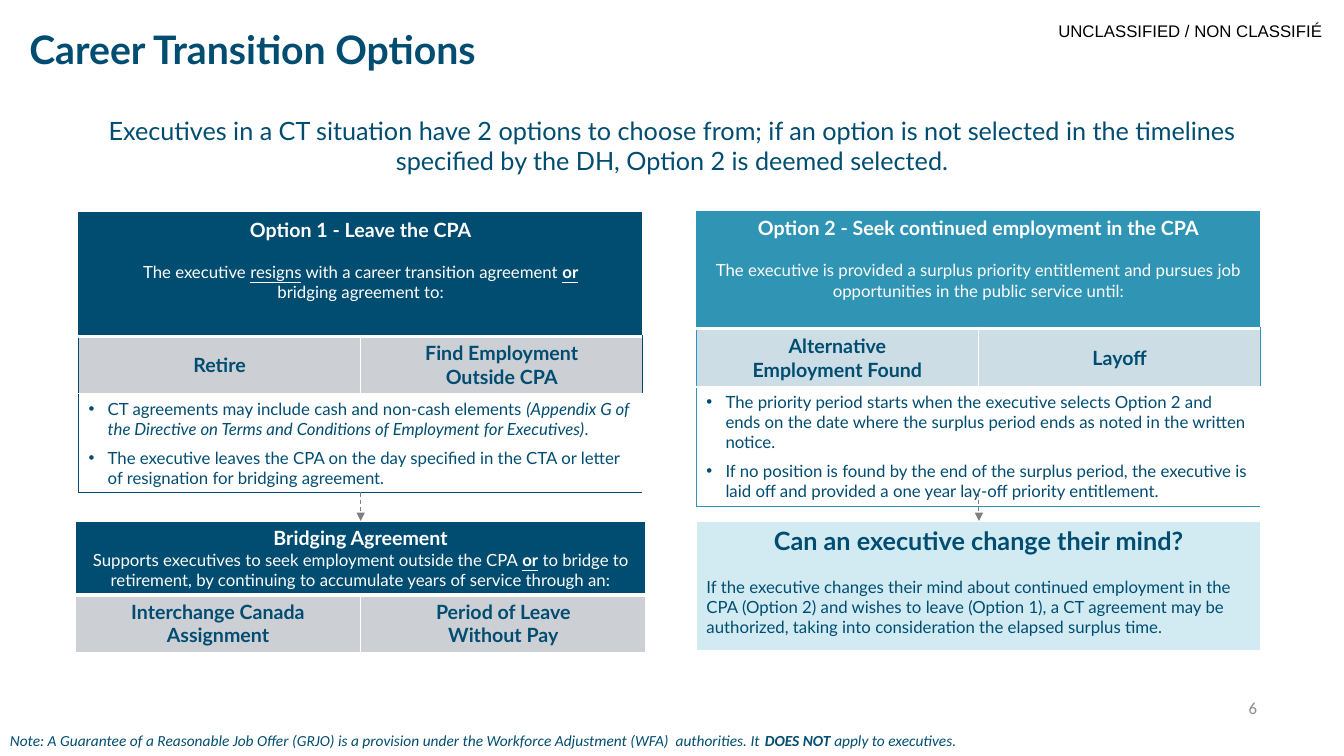
from collections import namedtuple

from lxml import etree
from pptx import Presentation
from pptx.dml.color import RGBColor
from pptx.enum.dml import MSO_LINE
from pptx.enum.shapes import MSO_CONNECTOR
from pptx.enum.text import MSO_ANCHOR, PP_ALIGN
from pptx.oxml.ns import qn
from pptx.util import Cm, Pt

LEFT, CENTER, RIGHT = PP_ALIGN.LEFT, PP_ALIGN.CENTER, PP_ALIGN.RIGHT
TOP, MIDDLE = MSO_ANCHOR.TOP, MSO_ANCHOR.MIDDLE
STRAIGHT = MSO_CONNECTOR.STRAIGHT
DASH = MSO_LINE.DASH

COLORS = {
    "navy": "004D71", "teal": "3095B4", "silver": "CCD0D5", "mist": "CDDDE5",
    "ice": "D2EBF3", "white": "FFFFFF", "black": "000000",
    "gray": "808080", "number": "8C8C8C",
}

Line = namedtuple("Line", "runs size align before bullet", defaults=(12, CENTER, 0, False))
Cell = namedtuple("Cell", "lines fill color anchor", defaults=("navy", MIDDLE))


def heading(text, size=14):
    """Return a bold centred line."""
    return Line([(text, "b")], size)


def bullet(*runs):
    """Return a bulleted line."""
    return Line(runs, align=LEFT, bullet=True)


class TransitionSlide:
    """Style and drawing methods for one slide."""

    def __init__(self, deck):
        """Add a title-only slide to the deck."""
        self.page = deck.slides.add_slide(deck.slide_layouts[5])
        self.font = "Lato"

    def color(self, name):
        """Return a named colour."""
        return RGBColor.from_string(COLORS[name])

    def set_lines(self, frame, lines, color, font=None):
        """Fill a text frame with formatted lines."""
        for index, line in enumerate(lines):
            para = frame.paragraphs[0] if index == 0 else frame.add_paragraph()
            para.alignment = line.align
            if line.before:
                para.space_before = Pt(line.before)
            if line.bullet:
                para.space_after = Pt(6)
                properties = para._p.get_or_add_pPr()
                properties.set("marL", str(Cm(0.48)))
                properties.set("indent", str(-Cm(0.48)))
                etree.SubElement(properties, qn("a:buFont")).set("typeface", "Arial")
                etree.SubElement(properties, qn("a:buChar")).set("char", "•")
            for text, style in line.runs:
                span = para.add_run()
                span.text = text
                span.font.name = font or self.font
                span.font.size = Pt(line.size)
                span.font.color.rgb = self.color(color)
                span.font.bold = "b" in style
                span.font.italic = "i" in style
                span.font.underline = "u" in style

    def title(self, text, left, top, width, height):
        """Place the slide title."""
        box = self.page.shapes.title
        box.left, box.top, box.width, box.height = Cm(left), Cm(top), Cm(width), Cm(height)
        frame = box.text_frame
        frame.margin_left = frame.margin_right = frame.margin_top = frame.margin_bottom = 0
        frame.vertical_anchor = MIDDLE
        self.set_lines(frame, [Line([(text, "b")], 28, LEFT)], "navy")

    def text(self, line, left, top, width, height, color="navy", font=None,
             anchor=TOP, inset=True):
        """Place a text box with one paragraph."""
        box = self.page.shapes.add_textbox(Cm(left), Cm(top), Cm(width), Cm(height))
        frame = box.text_frame
        frame.word_wrap = True
        frame.vertical_anchor = anchor
        if not inset:
            frame.margin_left = frame.margin_right = frame.margin_top = frame.margin_bottom = 0
        self.set_lines(frame, [line], color, font)

    def border(self, cell, side, color, width):
        """Draw one side of a cell."""
        line = etree.SubElement(cell._tc.get_or_add_tcPr(), qn("a:ln" + side))
        line.set("w", str(Pt(width)))
        fill = etree.SubElement(line, qn("a:solidFill"))
        etree.SubElement(fill, qn("a:srgbClr")).set("val", COLORS[color])

    def table(self, rows, heights, left, top, width, edge):
        """Place a table whose one-cell rows span all columns."""
        columns = max(len(row) for row in rows)
        frame = self.page.shapes.add_table(
            len(rows), columns, Cm(left), Cm(top), Cm(width), Cm(sum(heights)))
        table = frame.table
        table.first_row = table.horz_banding = False
        for column in table.columns:
            column.width = Cm(width / columns)
        for r, (row, height) in enumerate(zip(rows, heights)):
            table.rows[r].height = Cm(height)
            bottom = edge if 0 < r == len(rows) - 1 else "white"
            for c in range(columns):
                cell = table.cell(r, c)
                content = row[min(c, len(row) - 1)]
                self.border(cell, "L", edge if c == 0 else "white", 1)
                self.border(cell, "R", edge if c == columns - 1 else "white", 1)
                self.border(cell, "T", edge if r == 0 else "white", 1)
                self.border(cell, "B", bottom, 3 if r == 0 else 1)
                cell.fill.solid()
                cell.fill.fore_color.rgb = self.color(content.fill)
                if c < len(row):
                    cell.vertical_anchor = content.anchor
                    self.set_lines(cell.text_frame, content.lines, content.color)
            if len(row) < columns:
                table.cell(r, 0).merge(table.cell(r, columns - 1))

    def arrow(self, x, top, bottom):
        """Draw a dashed arrow pointing down."""
        arrow = self.page.shapes.add_connector(STRAIGHT, Cm(x), Cm(top), Cm(x), Cm(bottom))
        arrow.line.color.rgb = self.color("gray")
        arrow.line.width = Pt(0.75)
        arrow.line.dash_style = DASH
        etree.SubElement(arrow.line._get_or_add_ln(), qn("a:tailEnd")).set("type", "triangle")
        etree.SubElement(arrow._element.spPr, qn("a:effectLst"))


def main():
    """Build and save the slide."""
    deck = Presentation()
    deck.slide_width, deck.slide_height = Cm(33.87), Cm(19.05)
    slide = TransitionSlide(deck)

    slide.title("Career Transition Options", 0.74, 0, 23.1, 2.44)
    slide.text(Line([("UNCLASSIFIED / NON CLASSIFIÉ", "")], align=LEFT),
               26.67, 0.53, 6.9, 0.5, "black", "Arial", inset=False)
    slide.text(Line([("6", "")], align=RIGHT), 24.03, 17.32, 7.9, 1.02,
               "number", "Calibri", MIDDLE)
    slide.text(Line([("Executives in a CT situation have 2 options to choose from; if an option is "
                      "not selected in the timelines specified by the DH, Option 2 is deemed "
                      "selected.", "")], 18), 2.08, 2.77, 29.72, 3.25)
    slide.text(Line([("Note: A Guarantee of a Reasonable Job Offer (GRJO) is a provision under the "
                      "Workforce Adjustment (WFA)  authorities. It ", "i"),
                     ("DOES NOT ", "bi"), ("apply to executives.", "i")], 11, LEFT),
               0, 18.31, 27.81, 0.74, font="Calibri")

    slide.table([
        [Cell([heading("Option 1 - Leave the CPA"),
               Line([("The executive ", ""), ("resigns", "u"),
                     (" with a career transition agreement ", ""), ("or", "bu")], before=14.4),
               Line([("bridging agreement to:", "")])], "navy", "white", TOP)],
        [Cell([heading("Retire")], "silver"),
         Cell([heading("Find Employment"), heading("Outside CPA")], "silver")],
        [Cell([bullet(("CT agreements may include cash and non-cash elements ", ""),
                      ("(Appendix G of the Directive on Terms and Conditions of Employment "
                       "for Executives)", "i"), (".", "")),
               bullet(("The executive leaves the CPA on the day specified in the CTA or letter "
                       "of resignation for bridging agreement.", ""))], "white")],
    ], [3.12, 1.32, 2.18], 1.98, 5.36, 14.22, "navy")

    slide.table([
        [Cell([heading("Option 2 - Seek continued employment in the CPA"),
               Line([("The executive is provided a surplus priority entitlement and pursues job "
                      "opportunities in the public service until:", "")], before=14.4)],
              "teal", "white", TOP)],
        [Cell([heading("Alternative"), heading("Employment Found")], "mist"),
         Cell([heading("Layoff")], "mist")],
        [Cell([bullet(("The priority period starts when the executive selects Option 2 and ends "
                       "on the date where the surplus period ends as noted in the written "
                       "notice.", "")),
               bullet(("If no position is found by the end of the surplus period, the executive "
                       "is laid off and provided a one year lay-off priority entitlement.", ""))],
              "white")],
    ], [2.95, 1.47, 2.64], 17.55, 5.33, 14.22, "teal")

    slide.table([
        [Cell([heading("Bridging Agreement"),
               Line([("Supports executives to seek employment outside the CPA ", ""), ("or", "bu"),
                     (" to bridge to retirement, by continuing to accumulate years of service "
                      "through an:", "")])], "navy", "white", TOP)],
        [Cell([heading("Interchange Canada Assignment")], "silver"),
         Cell([heading("Period of Leave"), heading("Without Pay")], "silver")],
    ], [1.85, 1.4], 1.9, 13.13, 14.38, "white")

    slide.table([
        [Cell([heading("Can an executive change their mind?", 18),
               Line([("If the executive changes their mind about continued employment in the CPA "
                      "(Option 2) and wishes to leave (Option 1), a CT agreement may be "
                      "authorized, taking into consideration the elapsed surplus time.", "")],
                    align=LEFT, before=14.4)], "ice", anchor=TOP)],
    ], [3.3], 17.55, 13.13, 14.22, "white")

    for x in (9.09, 24.67):
        slide.arrow(x, 12.41, 13.13)
    deck.save("out.pptx")


if __name__ == "__main__":
    main()
